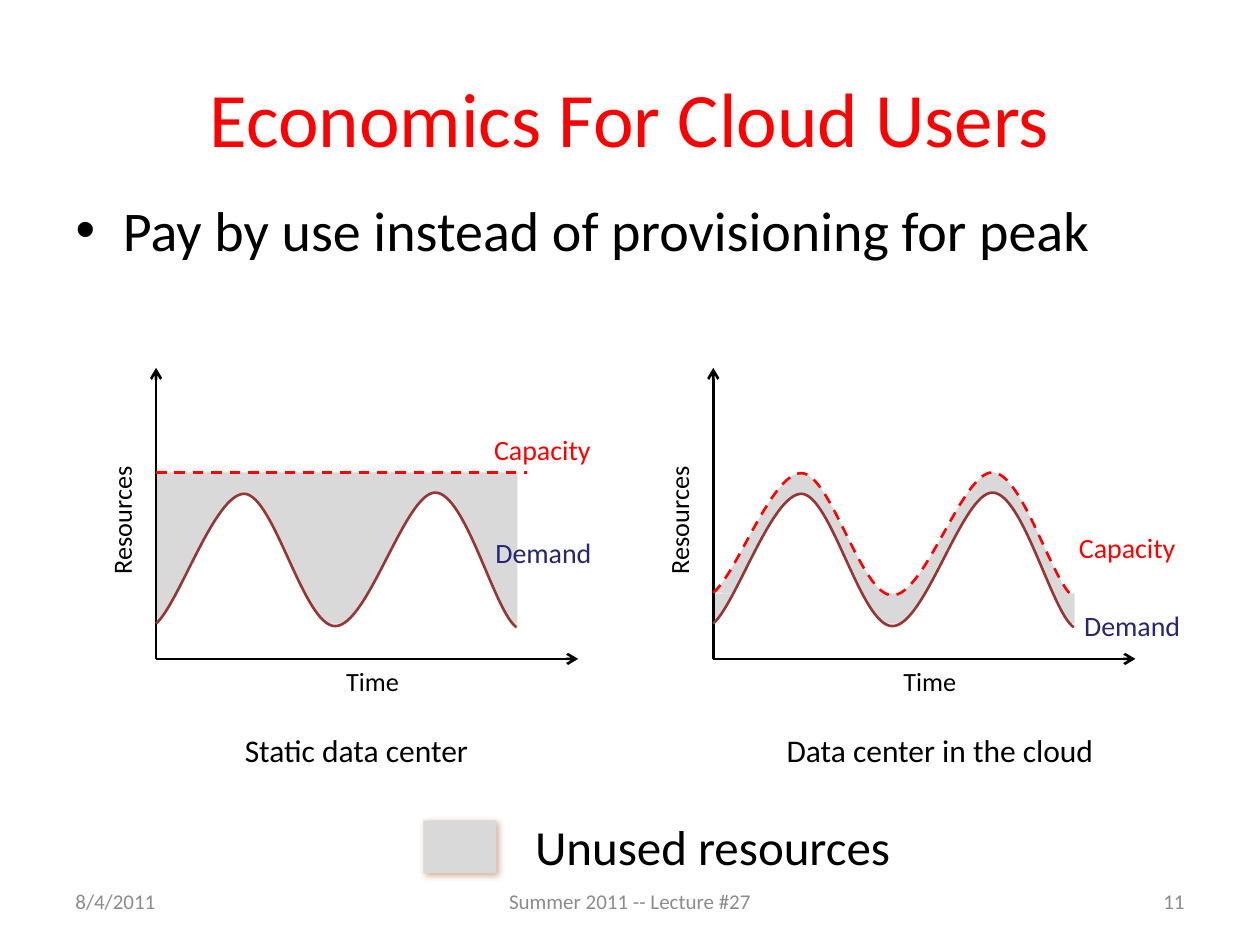
from lxml import etree
from pptx import Presentation
from pptx.dml.color import RGBColor
from pptx.enum import dml, shapes, text
from pptx.oxml import ns, parse_xml
from pptx.util import Pt

COLORS = {"red": "FF0000", "black": "000000", "grey": "D9D9D9", "white": "FFFFFF",
          "demand_line": "953735", "demand_text": "262673", "footer": "8C8C8C",
          "shadow": "984807"}
FONT = "Calibri"
ALIGN = text.PP_ALIGN

# Bezier points of the two waves, relative to the top left of a graph
WAVE_X = (0, 13.5, 33.5, 50.4, 67.3, 84.5, 102.4, 121, 142.3, 159.5, 176.8, 193.4, 206)
DEMAND_Y = (146.2, 133.9, 72, 72, 72.4, 148, 147.6, 147.6, 71.3, 71.3, 71.3, 139.7, 148.3)
CAPACITY_Y = (128.5, 117.7, 59.8, 60.2, 60.5, 130.3, 130, 130, 59.4, 59.8, 59.8, 122.8, 131)
WAVE_WIDTH = 206
PEAK_Y = 59.8


def rgb(name):
    return RGBColor.from_string(COLORS[name])


def write(frame, words, size, color, align=None):
    paragraph = frame.paragraphs[0]
    if align is not None:
        paragraph.alignment = align
    run = paragraph.add_run()
    run.text = words
    run.font.name, run.font.size = FONT, Pt(size)
    run.font.color.rgb = rgb(color)


def place(shape, x, y, w, h):
    shape.left, shape.top, shape.width, shape.height = Pt(x), Pt(y), Pt(w), Pt(h)


def add_label(slide, x, y, w, h, words, size, color="black", align=ALIGN.CENTER,
              wrap=False, upward=False):
    box = slide.shapes.add_textbox(Pt(x), Pt(y), Pt(w), Pt(h))
    frame = box.text_frame
    frame.word_wrap = wrap
    if wrap:
        frame.vertical_anchor = text.MSO_ANCHOR.MIDDLE
    if upward:
        box.element.txBody.find(ns.qn("a:bodyPr")).set("vert", "vert270")
    write(frame, words, size, color, align)


def add_block(slide, x, y, w, h):
    block = slide.shapes.add_shape(shapes.MSO_SHAPE.RECTANGLE, Pt(x), Pt(y), Pt(w), Pt(h))
    block.shadow.inherit = False
    block.fill.solid()
    block.fill.fore_color.rgb = rgb("grey")
    block.line.fill.background()
    return block


def style_line(line, color, dashed=False):
    line.color.rgb = rgb(color)
    line.width = Pt(1.5)
    if dashed:
        line.dash_style = dml.MSO_LINE.DASH


def add_line(slide, x1, y1, x2, y2, color, dashed=False, arrow=False):
    connector = slide.shapes.add_connector(
        shapes.MSO_CONNECTOR.STRAIGHT, Pt(x1), Pt(y1), Pt(x2), Pt(y2))
    style_line(connector.line, color, dashed)
    properties = connector.element.spPr
    if arrow:
        etree.SubElement(properties.find(ns.qn("a:ln")), ns.qn("a:tailEnd"), type="arrow")
    etree.SubElement(properties, ns.qn("a:effectLst"))


def bend(freeform):
    """Turn each three line segments of a freeform into one cubic Bezier curve."""
    segments = list(freeform.element.iter(ns.qn("a:lnTo")))
    for first in range(0, len(segments), 3):
        curve = etree.Element(ns.qn("a:cubicBezTo"))
        segments[first].addprevious(curve)
        for segment in segments[first:first + 3]:
            curve.append(segment[0])
            segment.getparent().remove(segment)


def add_wave(slide, x, y, heights, fill=None, line=None, dashed=False):
    points = [(Pt(x + px), Pt(y + py)) for px, py in zip(WAVE_X, heights)]
    builder = slide.shapes.build_freeform(*points[0])
    builder.add_line_segments(points[1:], close=False)
    wave = builder.convert_to_shape()
    bend(wave)
    wave.shadow.inherit = False
    if fill:
        wave.fill.solid()
        wave.fill.fore_color.rgb = rgb(fill)
    else:
        wave.fill.background()
    if line:
        style_line(wave.line, line, dashed)
    else:
        wave.line.fill.background()


def add_graph(slide, x, y, w, h, capacity_at, demand_at, follows_demand):
    """Draw one resources-over-time graph; x, y, w, h is the box of its axes."""
    if follows_demand:
        add_block(slide, x + 0.5, y + 128.9, WAVE_WIDTH, 17.3)
        add_wave(slide, x, y, CAPACITY_Y, fill="grey")
    else:
        add_block(slide, x + 0.5, y + PEAK_Y, WAVE_WIDTH, 86.4)
    add_line(slide, x, y + h, x, y, "black", arrow=True)
    add_line(slide, x, y + h, x + w, y + h, "black", arrow=True)
    add_wave(slide, x, y, DEMAND_Y, fill="white", line="demand_line")
    if follows_demand:
        add_wave(slide, x, y, CAPACITY_Y, line="red", dashed=True)
    else:
        add_line(slide, x, y + PEAK_Y, x + 211.7, y + PEAK_Y, "red", dashed=True)
    for (dx, dy), width, words, color in ((demand_at, 74.2, "Demand", "demand_text"),
                                          (capacity_at, 75.6, "Capacity", "red")):
        add_label(slide, x + dx, y + dy, width, 26.6, words, 16, color)
    add_label(slide, x + 100.3, y + h, 46.8, 25.2, "Time", 15)
    add_label(slide, x - 32.4, y + 47.5, 32.4, 79.2, "Resources", 15, upward=True)


def add_legend(slide, x, y):
    swatch = add_block(slide, x, y + 5.8, 41.8, 30.2)
    effects = swatch.element.spPr.find(ns.qn("a:effectLst"))
    effects.append(parse_xml(
        f'<a:outerShdw {ns.nsdecls("a")} blurRad="{Pt(4)}" dist="{Pt(2)}" dir="2700000" '
        f'algn="tl" rotWithShape="0"><a:srgbClr val="{COLORS["shadow"]}">'
        '<a:alpha val="43000"/></a:srgbClr></a:outerShdw>'))
    add_label(slide, x + 43.2, y, 244.1, 41, "Unused resources", 28)


def add_headings(slide):
    title, body = slide.placeholders
    place(title, 36, 21.6, 648, 90)
    write(title.text_frame, "Economics For Cloud Users", 44, "red", ALIGN.CENTER)
    place(body, 36, 108, 660, 414)
    write(body.text_frame, "Pay by use instead of provisioning for peak", 32, "black")


def add_footer(slide, y, h):
    for x, w, words, align in ((36, 168, "8/4/2011", ALIGN.LEFT),
                               (246, 228, "Summer 2011 -- Lecture #27", ALIGN.CENTER),
                               (516, 168, "11", ALIGN.RIGHT)):
        add_label(slide, x, y, w, h, words, 12, "footer", align, wrap=True)


def main():
    deck = Presentation()
    deck.slide_width, deck.slide_height = Pt(720), Pt(540)
    slide = deck.slides.add_slide(deck.slide_layouts[1])
    add_headings(slide)
    add_graph(slide, 89.2, 210.2, 241.2, 166.3, (182.9, 33.4), (184.3, 92.2), False)
    add_graph(slide, 407.6, 210.2, 241.2, 166.3, (198.7, 89.3), (202.3, 133.9), True)
    add_label(slide, 102.2, 414, 203, 36.7, "Static data center", 18)
    add_label(slide, 401.8, 414, 270.7, 36.7, "Data center in the cloud", 18)
    add_legend(slide, 241.9, 463)
    add_footer(slide, 500.5, 28.8)
    deck.save("out.pptx")


if __name__ == "__main__":
    main()
